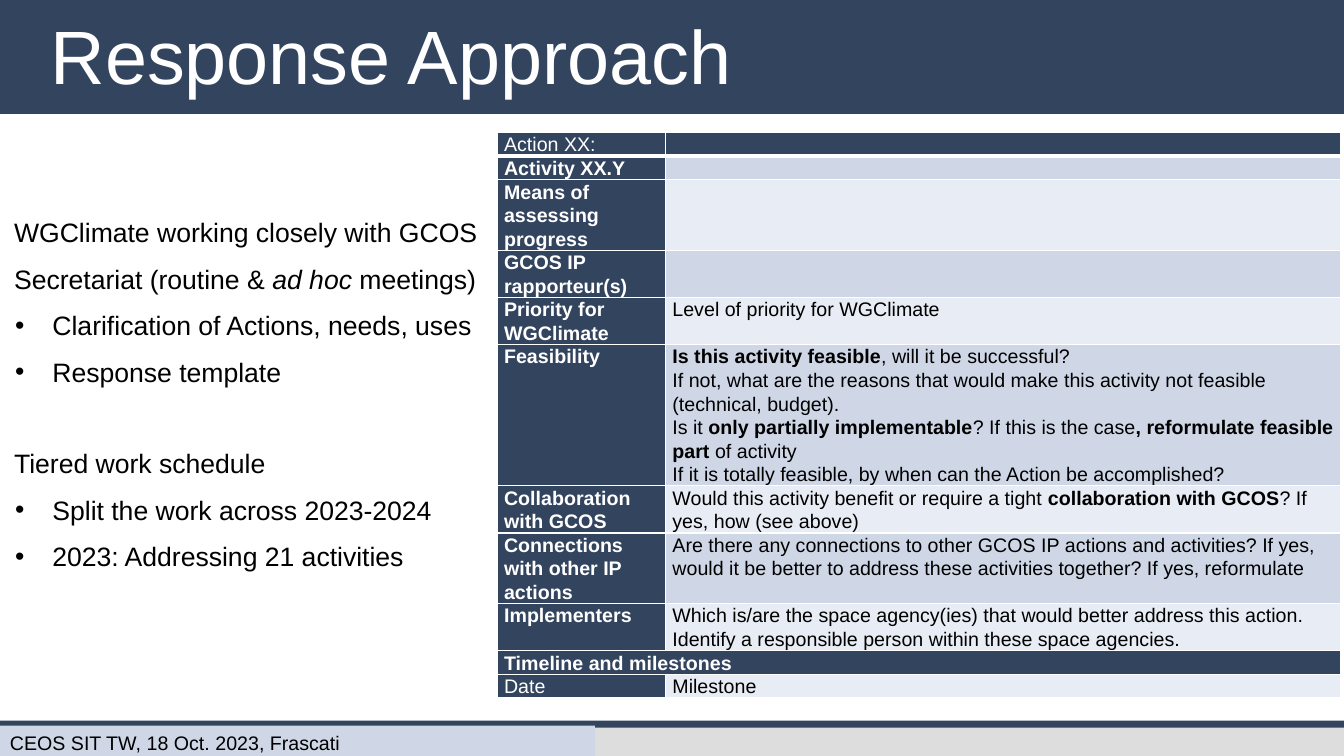
import pptx
import pptx.util
import pptx.dml.color
import pptx.enum.shapes
import pptx.enum.text
import pptx.oxml.ns
import lxml.etree

Inches = pptx.util.Inches
Pt = pptx.util.Pt
RGBColor = pptx.dml.color.RGBColor
Anchor = pptx.enum.text.MSO_ANCHOR
Align = pptx.enum.text.PP_ALIGN
qn = pptx.oxml.ns.qn

NAVY = RGBColor(0x33, 0x44, 0x5F)
GREY = RGBColor(0xDD, 0xDD, 0xDD)
FOOTER_BLUE = RGBColor(0xCF, 0xD6, 0xE5)
BAND_DARK = RGBColor(0xCF, 0xD7, 0xE7)
BAND_LIGHT = RGBColor(0xE8, 0xEC, 0xF4)
WHITE = RGBColor(0xFF, 0xFF, 0xFF)
BLACK = RGBColor(0, 0, 0)


def add_runs(paragraph, text, size, color, emphasis="bold", base_bold=False):
    for index, part in enumerate(text.split("*")):
        if part:
            run = paragraph.add_run()
            run.text = part
            run.font.name = "Arial"
            run.font.size = Pt(size)
            run.font.color.rgb = color
            run.font.bold = base_bold
            if index % 2:
                setattr(run.font, emphasis, True)


def add_element(parent, tag, **attributes):
    return lxml.etree.SubElement(parent, qn(tag), attributes)


presentation = pptx.Presentation()
presentation.slide_width = Inches(13.33)
presentation.slide_height = Inches(7.5)
slide = presentation.slides.add_slide(presentation.slide_layouts[1])

bars = [
    (0, 13.33, 1.13, NAVY),
    (7.19, 13.34, 0.31, GREY),
    (7.15, 13.34, 0.07, NAVY),
    (7.2, 5.9, 0.34, FOOTER_BLUE),
]
for top, width, height, color in bars:
    shape = slide.shapes.add_shape(
        pptx.enum.shapes.MSO_SHAPE.RECTANGLE, 0, Inches(top), Inches(width), Inches(height))
    shape.shadow.inherit = False
    shape.fill.solid()
    shape.fill.fore_color.rgb = color
    shape.line.fill.background()

footer = shape.text_frame
footer.word_wrap = True
footer.vertical_anchor = Anchor.MIDDLE
footer.paragraphs[0].alignment = Align.LEFT
add_runs(footer.paragraphs[0], "CEOS SIT TW, 18 Oct. 2023, Frascati", 14, BLACK)

title = slide.shapes.title
body = slide.placeholders[1]
places = [
    (title, 0, 0, 10.58, 1.08, Anchor.MIDDLE, 0.5),
    (body, 0.04, 1.95, 5.02, 4.66, Anchor.TOP, 0.1),
]
for placeholder, left, top, width, height, anchor, margin in places:
    placeholder.left, placeholder.top = Inches(left), Inches(top)
    placeholder.width, placeholder.height = Inches(width), Inches(height)
    frame = placeholder.text_frame
    frame.auto_size = pptx.enum.text.MSO_AUTO_SIZE.NONE
    frame.word_wrap = True
    frame.vertical_anchor = anchor
    frame.margin_left = Inches(margin)
    placeholder.element.getparent().append(placeholder.element)

title.text_frame.paragraphs[0].alignment = Align.LEFT
add_runs(title.text_frame.paragraphs[0], "Response Approach", 54, WHITE)

topics = [
    ("WGClimate working closely with GCOS Secretariat (routine & *ad hoc *meetings)",
     ["Clarification of Actions, needs, uses", "Response template"]),
    ("Tiered work schedule",
     ["Split the work across 2023-2024", "2023: Addressing 21 activities"]),
]
frame = body.text_frame
for topic_index, (heading, points) in enumerate(topics):
    for line_index, line in enumerate([heading] + points):
        first = topic_index == 0 and line_index == 0
        paragraph = frame.paragraphs[0] if first else frame.add_paragraph()
        properties = paragraph._p.get_or_add_pPr()
        if line_index:
            properties.set("marL", str(Inches(0.38)))
            properties.set("indent", str(Inches(-0.37)))
            bullet_color = add_element(properties, "a:buClr")
            add_element(bullet_color, "a:srgbClr", val=str(BLACK))
            add_element(properties, "a:buChar", char="•")
        else:
            properties.set("marL", "0")
            properties.set("indent", "0")
            add_element(properties, "a:buNone")
        paragraph.line_spacing = 1.46
        paragraph.space_before = Pt(32 if topic_index and not line_index else 0)
        paragraph.space_after = Pt(0)
        add_runs(paragraph, line, 19, BLACK, emphasis="italic")

template_rows = [
    ("Action XX:", [""], 1),
    ("*Activity XX.Y", [""], 1),
    ("*Means of assessing progress", [""], 3),
    ("*GCOS IP rapporteur(s)", [""], 2),
    ("*Priority for WGClimate", ["Level of priority for WGClimate"], 2),
    ("*Feasibility", [
        "*Is this activity feasible*, will it be successful?",
        "If not, what are the reasons that would make this activity not feasible "
        "(technical, budget).",
        "Is it *only partially implementable*? If this is the case"
        "*, reformulate feasible part *of activity",
        "If it is totally feasible, by when can the Action be accomplished?"], 6),
    ("*Collaboration with GCOS", [
        "Would this activity benefit or require a tight *collaboration with GCOS*? "
        "If yes, how (see above)"], 2),
    ("*Connections with other IP actions", [
        "Are there any connections to other GCOS IP actions and activities? If yes, would it "
        "be better to address these activities together? If yes, reformulate"], 3),
    ("*Implementers", [
        "Which is/are the space agency(ies) that would better address this action. "
        "Identify a responsible person within these space agencies."], 2),
    ("*Timeline and milestones", [""], 1),
    ("Date", ["Milestone"], 1),
]
timeline_row = 9
line_height = 0.23
column_widths = [1.67, 6.7]
total_lines = sum(lines for label, answers, lines in template_rows)
table = slide.shapes.add_table(
    len(template_rows), 2, Inches(4.93), Inches(1.31),
    Inches(sum(column_widths)), Inches(total_lines * line_height)).table
table.first_row = False
table.horz_banding = False
for column, width in zip(table.columns, column_widths):
    column.width = Inches(width)

for row_index, (label, answers, lines) in enumerate(template_rows):
    table.rows[row_index].height = Inches(lines * line_height)
    for column_index, texts in enumerate([[label], answers]):
        cell = table.cell(row_index, column_index)
        cell.margin_left = cell.margin_right = Inches(0.07)
        cell.margin_top = cell.margin_bottom = 0
        cell_properties = cell._tc.get_or_add_tcPr()
        for side in ["L", "R", "T", "B"]:
            under_header = (row_index, side) in [(0, "B"), (1, "T")]
            border = add_element(
                cell_properties, "a:ln" + side, w=str(Pt(3 if under_header else 1)))
            border_fill = add_element(border, "a:solidFill")
            add_element(border_fill, "a:srgbClr", val=str(WHITE))
        is_label = column_index == 0 or row_index in (0, timeline_row)
        cell.fill.solid()
        cell.fill.fore_color.rgb = (
            NAVY if is_label else BAND_DARK if row_index % 2 else BAND_LIGHT)
        for text_index, text in enumerate(texts):
            frame = cell.text_frame
            paragraph = frame.add_paragraph() if text_index else frame.paragraphs[0]
            paragraph.line_spacing = 1.07
            add_runs(paragraph, text, 14, WHITE if is_label else BLACK)
            if not text:
                add_element(paragraph._p, "a:endParaRPr", sz="1400")

table.cell(timeline_row, 0).merge(table.cell(timeline_row, 1))

presentation.save("out.pptx")
